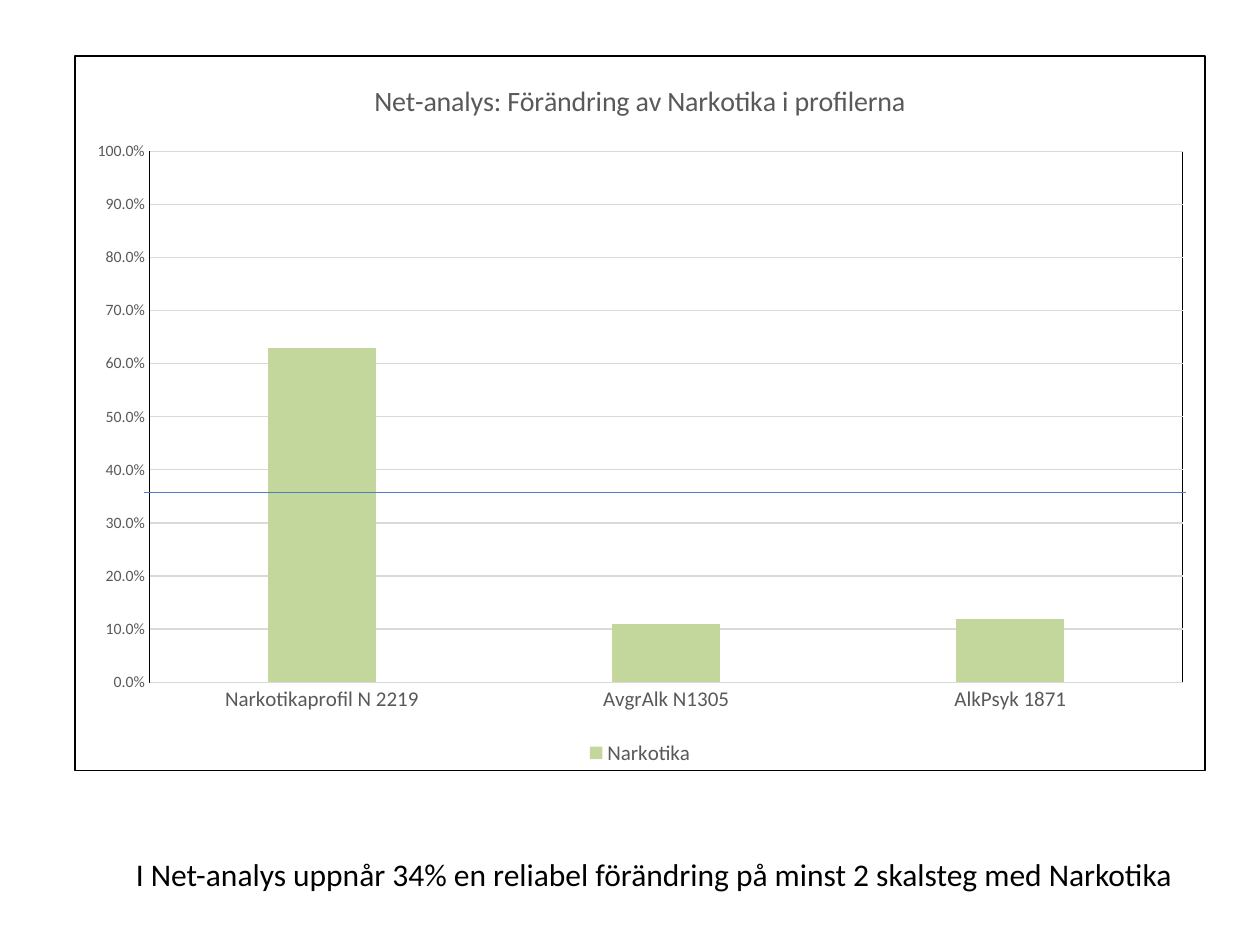
from lxml import etree
from pptx import Presentation
from pptx.chart.data import CategoryChartData
from pptx.dml.color import RGBColor
from pptx.enum.chart import XL_CHART_TYPE, XL_LEGEND_POSITION, XL_TICK_MARK
from pptx.enum.shapes import MSO_CONNECTOR
from pptx.enum.text import MSO_AUTO_SIZE
from pptx.oxml import parse_xml
from pptx.oxml.ns import nsdecls, qn
from pptx.util import Inches, Pt

COLUMNS = XL_CHART_TYPE.COLUMN_CLUSTERED
LEGEND_BOTTOM = XL_LEGEND_POSITION.BOTTOM
NO_TICKS = XL_TICK_MARK.NONE
STRAIGHT = MSO_CONNECTOR.STRAIGHT
GROW = MSO_AUTO_SIZE.SHAPE_TO_FIT_TEXT

TITLE = "Net-analys: Förändring av Narkotika i profilerna"
SERIES = "Narkotika"
CHANGE = {
    "Narkotikaprofil N 2219": 0.63,
    "AvgrAlk N1305": 0.11,
    "AlkPsyk 1871": 0.12,
}
CONCLUSION = "I Net-analys uppnår 34% en reliabel förändring på minst 2 skalsteg med Narkotika"

CHART_BOX = (0.59, 0.44, 8.98, 5.68)
MEAN_LINE = (1.14, 3.91, 9.41, 3.91)
CONCLUSION_BOX = (0.98, 6.74, 8.53, 0.4)

THEME = {
    "font": "Calibri",
    "black": "000000",
    "label": "595959",
    "grid": "D9D9D9",
    "bar": "C3D69B",
    "mean": "4B7EBC",
    "line": 0.75,
    "sizes": {"title": 16, "category": 12, "value": 9, "legend": 12, "base": 10, "conclusion": 18},
}


def style_font(font, role, color="label"):
    font.name = THEME["font"]
    font.size = Pt(THEME["sizes"][role])
    font.bold = False
    font.color.rgb = RGBColor.from_string(THEME[color])


def style_line(line, color):
    line.color.rgb = RGBColor.from_string(THEME[color])
    line.width = Pt(THEME["line"])


def border():
    return parse_xml(
        f'<c:spPr {nsdecls("c", "a")}><a:noFill/><a:ln w="{Pt(THEME["line"])}">'
        f'<a:solidFill><a:srgbClr val="{THEME["black"]}"/></a:solidFill></a:ln></c:spPr>'
    )


def frame_chart(chart):
    chart_part = chart.element.find(qn("c:chart"))
    chart_part.addnext(border())
    chart_part.find(qn("c:plotArea")).append(border())


def add_change_chart(slide):
    data = CategoryChartData(number_format="###0.0%")
    data.categories = list(CHANGE)
    data.add_series(SERIES, list(CHANGE.values()))
    chart = slide.shapes.add_chart(COLUMNS, *map(Inches, CHART_BOX), data).chart
    style_font(chart.font, "base", "black")

    chart.has_title = True
    heading = chart.chart_title.text_frame.paragraphs[0].add_run()
    heading.text = TITLE
    style_font(heading.font, "title")
    chart.chart_title.include_in_layout = False

    chart.has_legend = True
    chart.legend.position = LEGEND_BOTTOM
    chart.legend.include_in_layout = False
    style_font(chart.legend.font, "legend")

    plot = chart.plots[0]
    plot.gap_width = 219
    plot.overlap = -27
    plot.vary_by_categories = False
    bars = plot.series[0].format.fill
    bars.solid()
    bars.fore_color.rgb = RGBColor.from_string(THEME["bar"])

    for axis, role in ((chart.category_axis, "category"), (chart.value_axis, "value")):
        axis.major_tick_mark = axis.minor_tick_mark = NO_TICKS
        style_font(axis.tick_labels.font, role)
    style_line(chart.category_axis.format.line, "grid")

    percent = chart.value_axis
    percent.minimum_scale, percent.maximum_scale, percent.major_unit = 0, 1, 0.1
    percent.tick_labels.number_format = "###0.0%"
    percent.tick_labels.number_format_is_linked = False
    percent.format.line.fill.background()
    percent.has_major_gridlines = True
    style_line(percent.major_gridlines.format.line, "grid")
    frame_chart(chart)


def add_mean_line(slide):
    mean = slide.shapes.add_connector(STRAIGHT, *map(Inches, MEAN_LINE))
    style_line(mean.line, "mean")
    etree.SubElement(mean.element.spPr, qn("a:effectLst"))


def add_conclusion(slide):
    frame = slide.shapes.add_textbox(*map(Inches, CONCLUSION_BOX)).text_frame
    frame.word_wrap = False
    frame.auto_size = GROW
    sentence = frame.paragraphs[0].add_run()
    sentence.text = CONCLUSION
    style_font(sentence.font, "conclusion", "black")


def main():
    deck = Presentation()
    deck.slide_width, deck.slide_height = Inches(10), Inches(7.5)
    slide = deck.slides.add_slide(deck.slide_layouts[6])
    add_change_chart(slide)
    add_mean_line(slide)
    add_conclusion(slide)
    deck.save("out.pptx")


if __name__ == "__main__":
    main()
